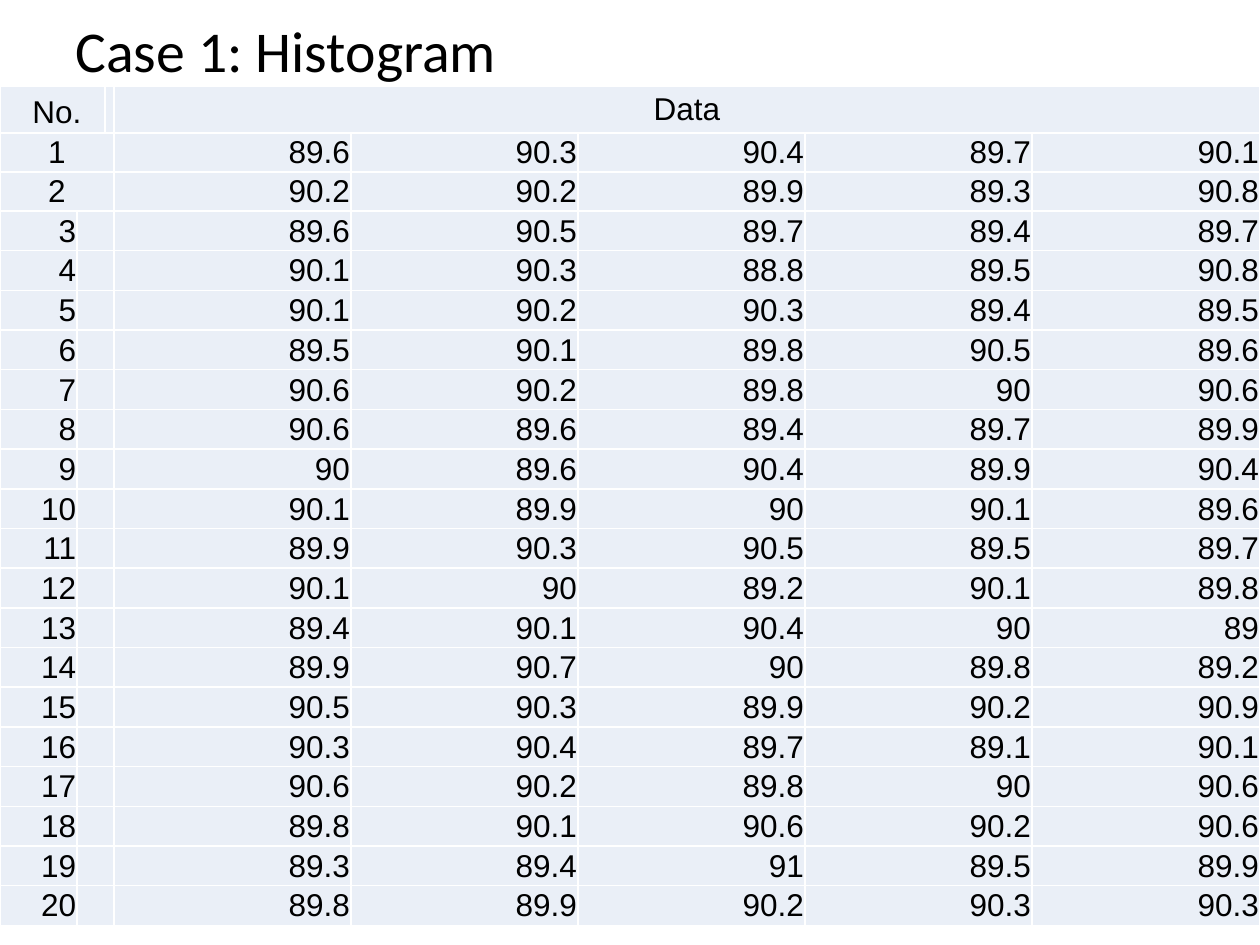
from pptx import Presentation
from pptx.dml.color import RGBColor
from pptx.enum.text import MSO_ANCHOR as Anchor, PP_ALIGN as Align
from pptx.oxml.ns import qn
from pptx.util import Pt
from lxml.etree import SubElement

INK, PALE, WHITE = "000000", "EAEFF7", "FFFFFF"
COLS = [77, 28, 9, 237, 227, 227, 227, 228]
HEAD, WIDE, BODY = 47, 39, 715
WIDES = 2
DATA = """
89.6 90.3 90.4 89.7 90.1
90.2 90.2 89.9 89.3 90.8
89.6 90.5 89.7 89.4 89.7
90.1 90.3 88.8 89.5 90.8
90.1 90.2 90.3 89.4 89.5
89.5 90.1 89.8 90.5 89.6
90.6 90.2 89.8 90 90.6
90.6 89.6 89.4 89.7 89.9
90 89.6 90.4 89.9 90.4
90.1 89.9 90 90.1 89.6
89.9 90.3 90.5 89.5 89.7
90.1 90 89.2 90.1 89.8
89.4 90.1 90.4 90 89
89.9 90.7 90 89.8 89.2
90.5 90.3 89.9 90.2 90.9
90.3 90.4 89.7 89.1 90.1
90.6 90.2 89.8 90 90.6
89.8 90.1 90.6 90.2 90.6
89.3 89.4 91 89.5 89.9
89.8 89.9 90.2 90.3 90.3
"""


def px(n):
    return round(n * 914400 / 126)


def color(code):
    return RGBColor.from_string(code)


def add_run(para, text, font, size):
    run = para.add_run()
    run.text = text
    run.font.name = font
    run.font.size = Pt(size)
    run.font.color.rgb = color(INK)


def add_title(slide, x, y, w, h):
    frame = slide.shapes.add_textbox(px(x), px(y), px(w), px(h)).text_frame
    frame.word_wrap = True
    frame.vertical_anchor = Anchor.MIDDLE
    para = frame.paragraphs[0]
    para.line_spacing = 0.9
    add_run(para, "Case 1: Histogram", "Calibri", 33)


def style_cell(cell):
    """Give the cell tight margins, white borders and a pale fill."""
    cell.margin_left = cell.margin_right = cell.margin_top = px(1)
    cell.margin_bottom = 0
    cell.vertical_anchor = Anchor.MIDDLE
    props = cell._tc.get_or_add_tcPr()
    for side in ("a:lnL", "a:lnR", "a:lnT", "a:lnB"):
        line = SubElement(props, qn(side), w=str(Pt(1)))
        fill = SubElement(line, qn("a:solidFill"))
        SubElement(fill, qn("a:srgbClr"), val=WHITE)
    cell.fill.solid()
    cell.fill.fore_color.rgb = color(PALE)


def put(cell, text, align):
    para = cell.text_frame.paragraphs[0]
    para.alignment = align
    add_run(para, text, "Arial", 18)


def add_data(slide, x, y):
    """Place the numbered samples under a merged heading row."""
    rows = [line.split() for line in DATA.strip().splitlines()]
    rest = len(rows) - WIDES
    heights = [px(HEAD)] + [px(WIDE)] * WIDES + [px(BODY) // rest] * rest
    table = slide.shapes.add_table(len(heights), len(COLS), px(x), px(y),
                                   px(sum(COLS)), sum(heights)).table
    table.first_row = table.horz_banding = False
    for col, width in zip(table.columns, COLS):
        col.width = px(width)
    for row, height in zip(table.rows, heights):
        row.height = height
    for cell in table.iter_cells():
        style_cell(cell)

    def merge(row, first, last):
        table.cell(row, first).merge(table.cell(row, last))

    merge(0, 0, 1)
    merge(0, 3, 7)
    put(table.cell(0, 0), "　No.", Align.LEFT)
    put(table.cell(0, 3), "Data", Align.CENTER)
    for num, values in enumerate(rows, 1):
        wide = num <= WIDES
        merge(num, 0 if wide else 1, 2)
        put(table.cell(num, 0), str(num), Align.CENTER if wide else Align.RIGHT)
        for col, value in enumerate(values, 3):
            put(table.cell(num, col), value, Align.RIGHT)


def main():
    deck = Presentation()
    deck.slide_width, deck.slide_height = px(1260), px(945)
    slide = deck.slides.add_slide(deck.slide_layouts[6])
    add_title(slide, 63, 22, 1134, 64)
    add_data(slide, 0, 86)
    deck.save("out.pptx")


if __name__ == "__main__":
    main()
